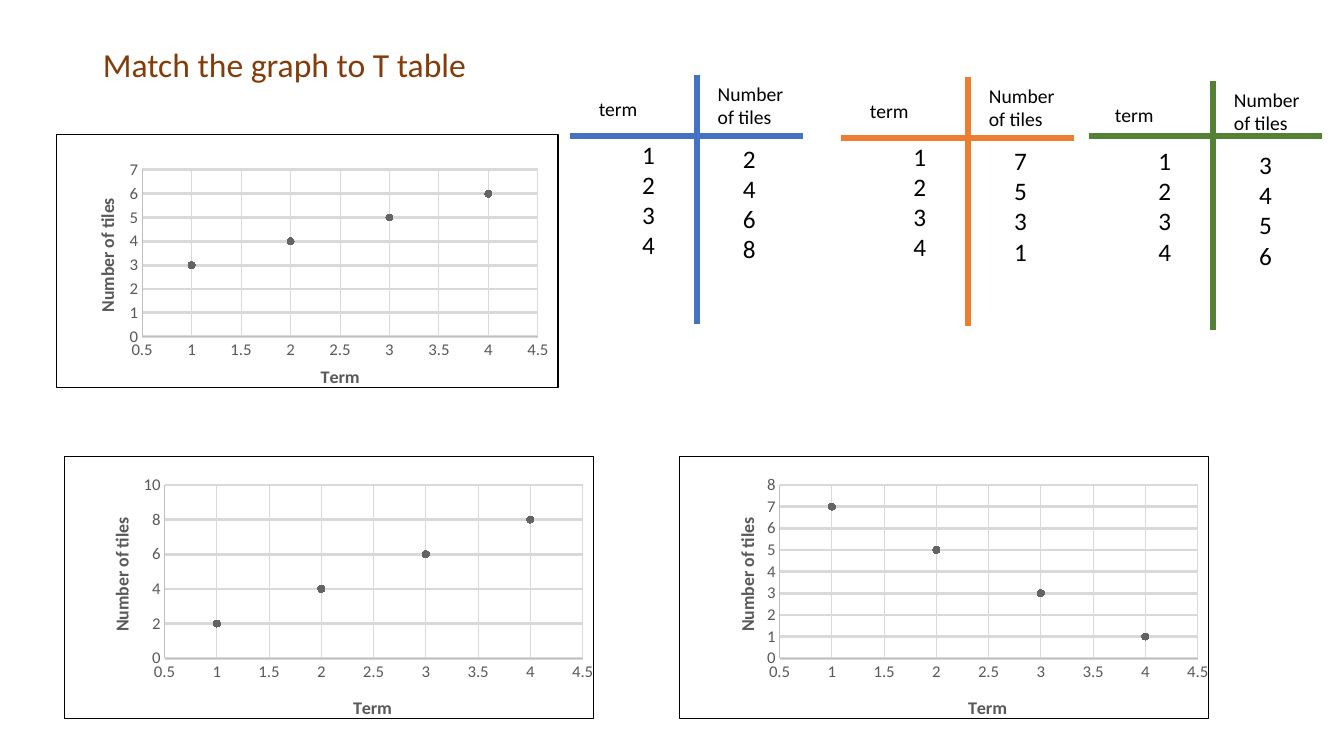
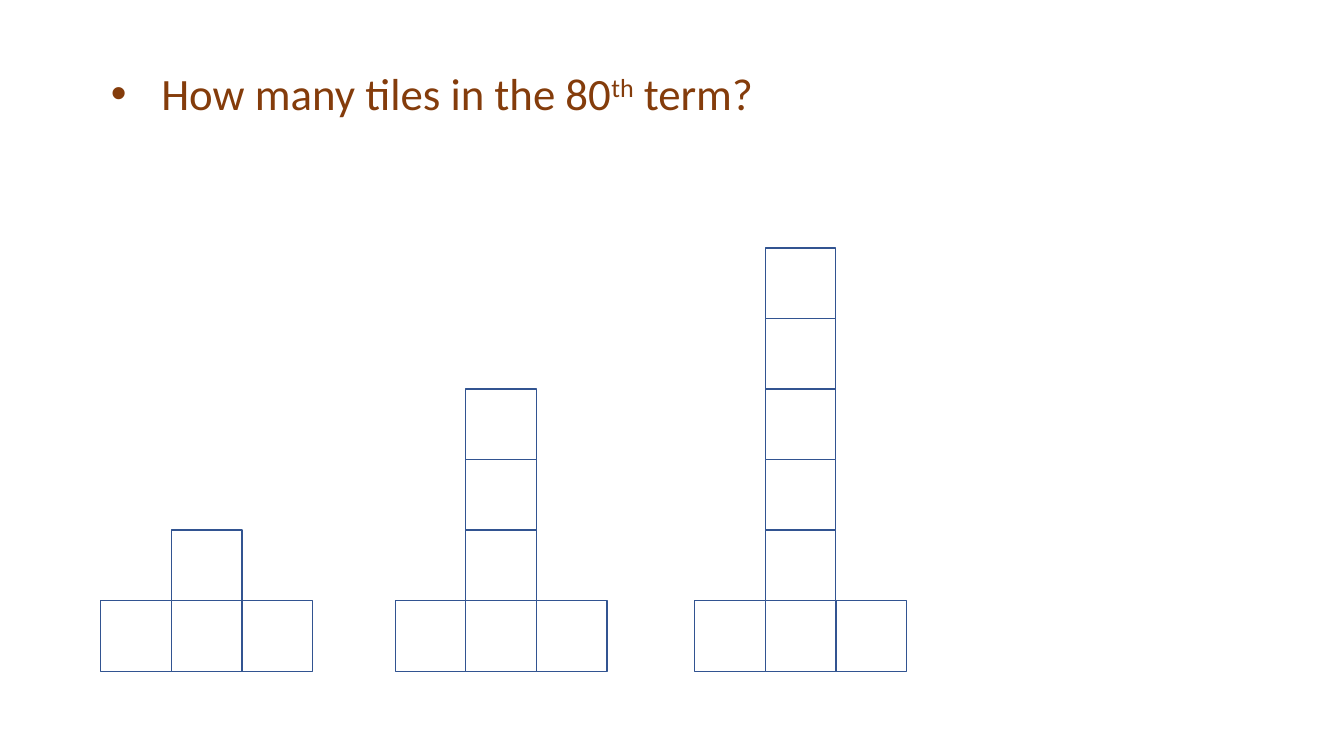
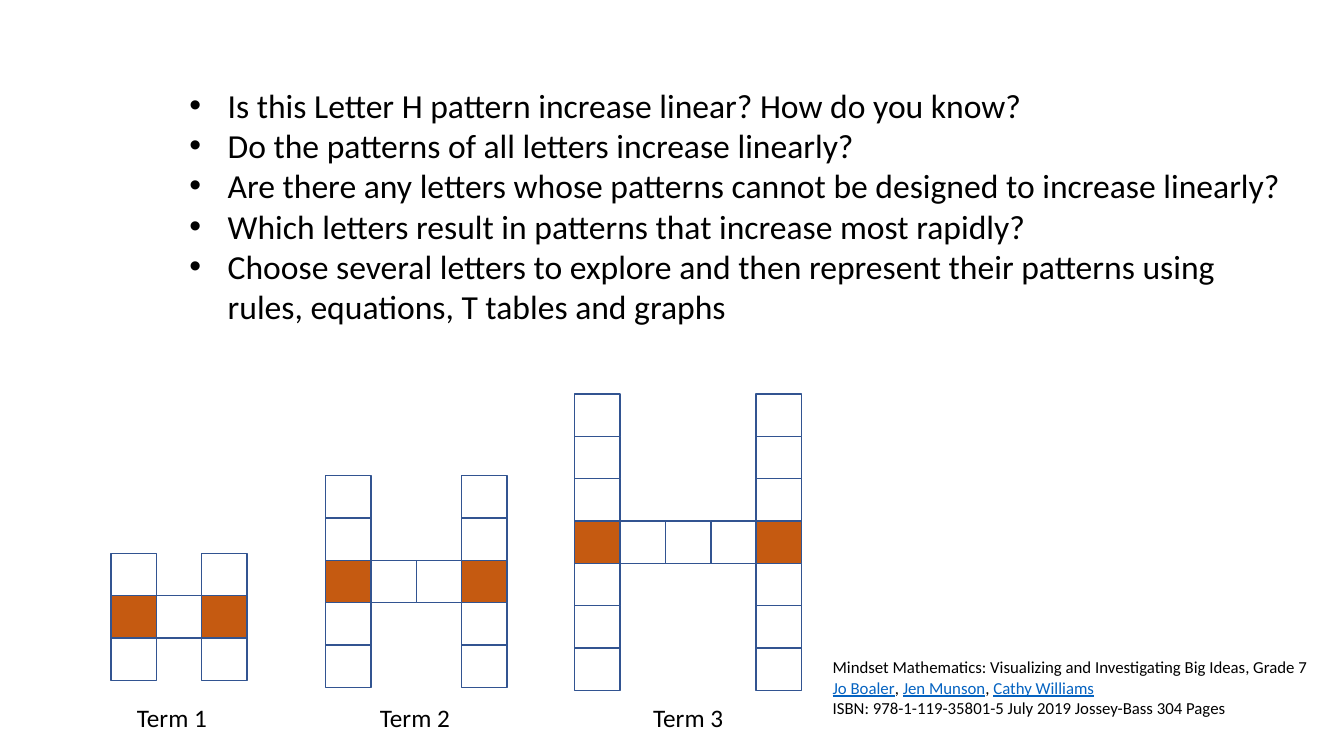
from lxml import etree
from pptx import Presentation
from pptx.chart.data import XyChartData
from pptx.dml.color import RGBColor
from pptx.enum.chart import XL_CHART_TYPE, XL_MARKER_STYLE, XL_TICK_MARK
from pptx.enum.shapes import MSO_CONNECTOR, MSO_SHAPE
from pptx.enum.text import MSO_ANCHOR, MSO_AUTO_SIZE, PP_ALIGN
from pptx.oxml import parse_xml
from pptx.oxml.ns import nsdecls, qn
from pptx.util import Pt

SCATTER = XL_CHART_TYPE.XY_SCATTER
CIRCLE = XL_MARKER_STYLE.CIRCLE
NO_TICK = XL_TICK_MARK.NONE
STRAIGHT = MSO_CONNECTOR.STRAIGHT
RECTANGLE = MSO_SHAPE.RECTANGLE
MIDDLE = MSO_ANCHOR.MIDDLE
NO_AUTOSIZE = MSO_AUTO_SIZE.NONE
LEFT = PP_ALIGN.LEFT

PX = 9144  # 100 px to the inch
TITLE_ONLY, BLANK = 5, 6

FONT = "Calibri"
BLACK, WHITE = "000000", "FFFFFF"
BROWN, RUST = "843C0B", "C55A11"
TILE_LINE, LINK = "325491", "0563C1"
GREY_TEXT, GREY_AXIS, GREY_GRID, GREY_DOT = "595959", "BFBFBF", "D9D9D9", "646464"

# Slide 1
MATCH_TITLE = "Match the graph to T table"
TERMS = [1, 2, 3, 4]
# stem x, top, bar left, bar y, colour, tiles
T_TABLES = [
    (691, 74, 565, 135, "4472C4", [2, 4, 6, 8]),
    (960, 76, 834, 137, "ED7D31", [7, 5, 3, 1]),
    (1203, 80, 1080, 135, "548235", [3, 4, 5, 6]),
]
BAR_WIDTH, STEM_HEIGHT = 231, 247
SMALL_PLOT = (0.17, 0.14, 0.79, 0.66)
LARGE_PLOT = (0.19, 0.11, 0.79, 0.66)
# box, tiles, y maximum, y step, plot area, corner of each axis title
GRAPHS = [
    ((56, 133, 498, 258), [3, 4, 5, 6], 7, 1, SMALL_PLOT, (0.52, 0.9), (0.07, 0.25)),
    ((63, 452, 526, 267), [2, 4, 6, 8], 10, 2, LARGE_PLOT, (0.54, 0.9), (0.08, 0.23)),
    ((673, 452, 526, 267), [7, 5, 3, 1], 8, 1, LARGE_PLOT, (0.54, 0.9), (0.1, 0.23)),
]

# Slide 2
TOWER_TITLE = [("How many tiles in the 80", False), ("th", True), (" term?", False)]
TOWERS = [(100, 1), (392, 3), (689, 5)]  # left, tiles above the base
TOWER_TILE, BASE_TOP = 70, 596

# Slide 3
QUESTIONS = [
    "Is this Letter H pattern increase linear? How do you know?",
    "Do the patterns of all letters increase linearly?",
    "Are there any letters whose patterns cannot be designed to increase linearly?",
    "Which letters result in patterns that increase most rapidly?",
    "Choose several letters to explore and then represent their patterns using "
    "rules, equations, T tables and graphs",
]
LETTERS = [(110, 591, 126), (323, 556, 367), (570, 517, 638)]  # left, bar top, label left
H_WIDTH, H_HEIGHT, LABEL_TOP = 45, 42, 692
BOOK = "Mindset Mathematics: Visualizing and Investigating Big Ideas, Grade 7"
AUTHORS = ["Jo Boaler", "Jen Munson", "Cathy Williams"]
EDITION = "ISBN: 978-1-119-35801-5 July 2019 Jossey-Bass 304 Pages"


def px(*lengths):
    return [length * PX for length in lengths]


def rgb(value):
    return RGBColor.from_string(value)


def set_font(font, size, color):
    font.name, font.size = FONT, Pt(size)
    font.color.rgb = rgb(color)


def set_line(line, color, width):
    line.color.rgb, line.width = rgb(color), Pt(width)


def add_bullet(paragraph, indent):
    properties = paragraph._p.get_or_add_pPr()
    properties.set("marL", str(indent * PX))
    properties.set("indent", str(-indent * PX))
    etree.SubElement(properties, qn("a:buFont")).set("typeface", "Arial")
    etree.SubElement(properties, qn("a:buChar")).set("char", "•")


def add_text(slide, box, lines, size, bullet_indent=0):
    """Add a text box with one paragraph for each line and return its paragraphs."""
    frame = slide.shapes.add_textbox(*px(*box)).text_frame
    frame.word_wrap = True
    frame.text = "\n".join(str(line) for line in lines)
    for paragraph in frame.paragraphs:
        if bullet_indent:
            add_bullet(paragraph, bullet_indent)
        set_font(paragraph.font, size, BLACK)
    return frame.paragraphs


def place_title(slide, box, size):
    """Move and format the title placeholder and return its paragraph."""
    title = slide.shapes.title
    title.left, title.top, title.width, title.height = px(*box)
    frame = title.text_frame
    frame.auto_size, frame.word_wrap = NO_AUTOSIZE, True
    frame.vertical_anchor = MIDDLE
    paragraph = frame.paragraphs[0]
    paragraph.alignment = LEFT
    set_font(paragraph.font, size, BROWN)
    return paragraph


def add_rule(slide, start, end, color):
    rule = slide.shapes.add_connector(STRAIGHT, *px(*start, *end))
    set_line(rule.line, color, 4.5)
    etree.SubElement(rule._element.spPr, qn("a:effectLst"))


def add_tile(slide, box, fill=WHITE):
    tile = slide.shapes.add_shape(RECTANGLE, *px(*box))
    tile.shadow.inherit = False
    tile.fill.solid()
    tile.fill.fore_color.rgb = rgb(fill)
    set_line(tile.line, TILE_LINE, 1)


def set_layout(parent, index, **values):
    """Give a chart part a manual layout as its child at index."""
    for old in parent.findall(qn("c:layout")):
        parent.remove(old)
    layout = etree.Element(qn("c:layout"))
    manual = etree.SubElement(layout, qn("c:manualLayout"))
    for name, value in values.items():
        etree.SubElement(manual, qn("c:" + name)).set("val", str(value))
    parent.insert(index, layout)


def format_axis(axis, title, corner, rotation, scale, grid_width):
    axis.minimum_scale, axis.maximum_scale, axis.major_unit = scale
    axis.major_tick_mark = axis.minor_tick_mark = NO_TICK
    axis.tick_labels.number_format = "General"
    axis.tick_labels.number_format_is_linked = False
    set_font(axis.tick_labels.font, 12, GREY_TEXT)
    set_line(axis.format.line, GREY_AXIS, 0.75)
    axis.has_major_gridlines = True
    set_line(axis.major_gridlines.format.line, GREY_GRID, grid_width)

    frame = axis.axis_title.text_frame
    frame.text = title
    set_font(frame.paragraphs[0].font, 13, GREY_TEXT)
    body = frame._txBody.find(qn("a:bodyPr"))
    body.set("rot", str(rotation))
    body.set("vert", "horz")
    set_layout(axis.axis_title._element, 1, xMode="edge", yMode="edge",
               x=corner[0], y=corner[1])


def add_graph(slide, box, tiles, y_max, y_step, plot, term_corner, tiles_corner):
    data = XyChartData()
    points = data.add_series("Series 1")
    for term, count in zip(TERMS, tiles):
        points.add_data_point(term, count)
    chart = slide.shapes.add_chart(SCATTER, *px(*box), data).chart
    chart.has_legend = chart.has_title = False
    set_font(chart.font, 10, BLACK)

    format_axis(chart.category_axis, "Term", term_corner, 0, (0.5, 4.5, 0.5), 0.75)
    format_axis(chart.value_axis, "Number of tiles", tiles_corner, -5400000,
                (0, y_max, y_step), 2)

    chart.plots[0].vary_by_categories = False
    series = chart.plots[0].series[0]
    series.format.line.fill.background()
    series.marker.style, series.marker.size = CIRCLE, 5
    series.marker.format.fill.solid()
    series.marker.format.fill.fore_color.rgb = rgb(GREY_DOT)
    set_line(series.marker.format.line, GREY_DOT, 0.75)

    left, top, width, height = plot
    space = chart._chartSpace
    plot_area = space.find(qn("c:chart")).find(qn("c:plotArea"))
    set_layout(plot_area, 0, layoutTarget="inner", xMode="edge", yMode="edge",
               x=left, y=top, w=width, h=height)
    # White ground and thin frame
    space.find(qn("c:chart")).addnext(parse_xml(
        f'<c:spPr {nsdecls("c", "a")}>'
        f'<a:solidFill><a:srgbClr val="{WHITE}"/></a:solidFill>'
        f'<a:ln w="9525"><a:solidFill><a:srgbClr val="{BLACK}"/></a:solidFill></a:ln>'
        '</c:spPr>'))


def add_t_table(slide, stem, top, bar_left, bar_y, color, tiles):
    add_rule(slide, (bar_left, bar_y), (bar_left + BAR_WIDTH, bar_y), color)
    add_rule(slide, (stem, top), (stem, top + STEM_HEIGHT), color)
    add_text(slide, (stem - 107, top + 17, 62, 31), ["term"], 14)
    add_text(slide, (stem + 11, top + 2, 104, 53), ["Number of tiles"], 14)
    add_text(slide, (stem - 64, top + 59, 31, 122), TERMS, 18)
    add_text(slide, (stem + 36, top + 63, 35, 122), tiles, 18)


def build_match(prs):
    slide = prs.slides.add_slide(prs.slide_layouts[TITLE_ONLY])
    title = place_title(slide, (92, 40, 1150, 53), 24)
    title.text = MATCH_TITLE
    title.line_spacing = 0.9
    for graph in GRAPHS:
        add_graph(slide, *graph)
    for table in T_TABLES:
        add_t_table(slide, *table)


def build_towers(prs):
    slide = prs.slides.add_slide(prs.slide_layouts[TITLE_ONLY])
    title = slide.shapes.title.text_frame.paragraphs[0]
    add_bullet(title, 50)
    place_title(slide, (100, 60, 1184, 64), 32)
    for words, raised in TOWER_TITLE:
        run = title.add_run()
        run.text = words
        if raised:
            run._r.get_or_add_rPr().set("baseline", "30000")

    for left, height in TOWERS:
        base = [(column, 0) for column in range(3)]
        tower = [(1, row) for row in range(1, height + 1)]
        for column, row in base + tower:
            add_tile(slide, (left + column * TOWER_TILE, BASE_TOP - row * TOWER_TILE,
                             TOWER_TILE, TOWER_TILE))


def build_letters(prs):
    slide = prs.slides.add_slide(prs.slide_layouts[BLANK])
    for term, (left, bar_top, label_left) in enumerate(LETTERS, 1):
        last = term + 1
        legs = [(column, row) for column in (0, last) for row in range(-term, term + 1)]
        bar = [(column, 0) for column in range(1, last)]
        for column, row in legs + bar:
            joint = row == 0 and column in (0, last)
            add_tile(slide, (left + column * H_WIDTH, bar_top + row * H_HEIGHT,
                             H_WIDTH, H_HEIGHT), RUST if joint else WHITE)
        add_text(slide, (label_left, LABEL_TOP, 108, 40), [f"Term {term}"], 18)

    add_text(slide, (178, 79, 1106, 293), QUESTIONS, 24, bullet_indent=38)

    # Book credit with the authors marked
    credit = add_text(slide, (816, 647, 499, 71), [BOOK, "", EDITION], 12)
    for position, author in enumerate(AUTHORS):
        if position:
            credit[1].add_run().text = ", "
        name = credit[1].add_run()
        name.text = author
        name.font.color.rgb = rgb(LINK)
        name.font.underline = True


def main():
    prs = Presentation()
    prs.slide_width, prs.slide_height = px(1333, 750)
    build_match(prs)
    build_towers(prs)
    build_letters(prs)
    prs.save("out.pptx")


if __name__ == "__main__":
    main()
